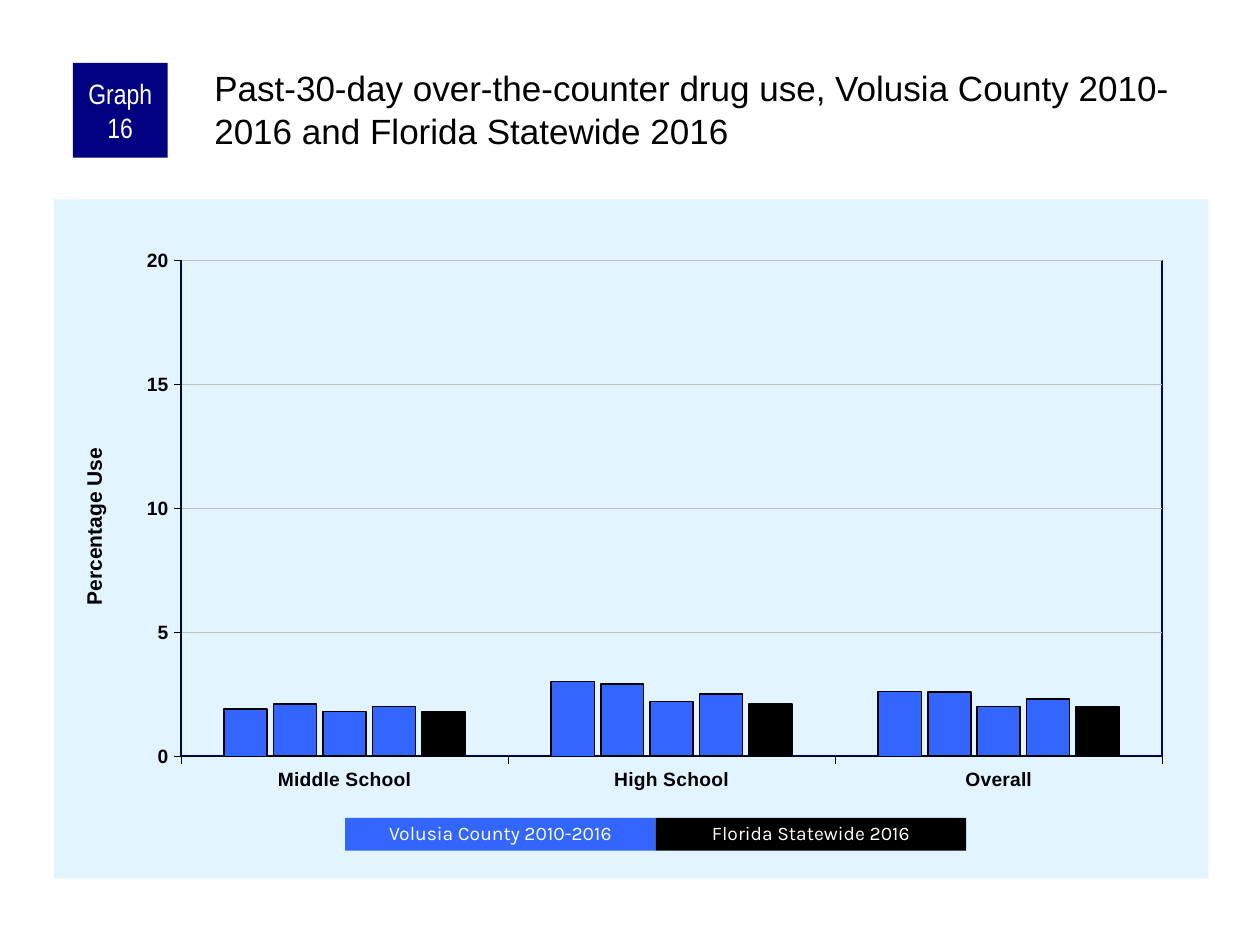
import dataclasses
import typing

import lxml.etree
import pptx
import pptx.chart.data
import pptx.dml.color
import pptx.enum.chart
import pptx.enum.shapes
import pptx.enum.text
import pptx.oxml
import pptx.oxml.ns
import pptx.util

Cm = pptx.util.Cm
Pt = pptx.util.Pt
RGB = pptx.dml.color.RGBColor.from_string
qn = pptx.oxml.ns.qn


@dataclasses.dataclass(frozen=True)
class Theme:
    navy: str = "000080"
    blue: str = "3366FF"
    black: str = "000000"
    white: str = "FFFFFF"
    panel: str = "E1F4FF"
    grid: str = "C0C0C0"
    font: str = "Arial"
    narrow_font: str = "Arial Narrow"
    legend_font: str = "Karla"
    title_size: float = 20
    badge_size: float = 16
    axis_title_size: float = 12
    label_size: float = 11
    hairline: float = 0.25


class Area(typing.NamedTuple):
    left: float
    top: float
    width: float
    height: float

    def lengths(self) -> list:
        return [Cm(value) for value in self]


@dataclasses.dataclass(frozen=True)
class Series:
    name: str
    values: tuple
    color: str
    outline: float = 1


@dataclasses.dataclass(frozen=True)
class Label:
    text: str
    area: Area
    fill: str
    font: str
    size: float
    spacing: float = 1
    margin: float = 0.13


THEME = Theme()
CATEGORIES = ("Middle School", "High School", "Overall")
SERIES = (
    Series("Series 1", (1.9, 3, 2.6), THEME.blue, 0.75),
    Series("Series 2", (2.1, 2.9, 2.6), THEME.blue),
    Series("Series 3", (1.8, 2.2, 2), THEME.blue),
    Series("Series 4", (2, 2.5, 2.3), THEME.blue),
    Series("Series 5", (1.8, 2.1, 2), THEME.black),
)
TITLE = "Past-30-day over-the-counter drug use, Volusia County 2010-2016 and Florida Statewide 2016"
TITLE_AREA = Area(4.24, 1.27, 20.12, 2.11)
CHART_AREA = Area(1.09, 4.02, 23.27, 13.69)
BADGE = Label("Graph 16", Area(1.47, 1.27, 1.91, 1.91), THEME.navy,
              THEME.narrow_font, THEME.badge_size)
LEGEND = (("Volusia County 2010-2016", THEME.blue), ("Florida Statewide 2016", THEME.black))
LEGEND_AREA = Area(6.96, 16.49, 6.26, 0.66)


def style_font(font, *, name: str, size: float, color: str, bold: bool = False) -> None:
    font.name = name
    font.size = Pt(size)
    font.bold = bold
    font.color.rgb = RGB(color)


def style_line(line, color: str, width: float) -> None:
    line.color.rgb = RGB(color)
    line.width = Pt(width)


def write_text(frame, text: str, *, align, anchor, margins: tuple,
               spacing: float = 1, **font_format) -> None:
    frame.word_wrap = True
    frame.auto_size = pptx.enum.text.MSO_AUTO_SIZE.NONE
    frame.vertical_anchor = anchor
    frame.margin_left, frame.margin_top, frame.margin_right, frame.margin_bottom = map(Cm, margins)
    para = frame.paragraphs[0]
    para.alignment = align
    para.line_spacing = spacing
    span = para.add_run()
    span.text = text
    style_font(span.font, **font_format)


def add_label(page, label: Label) -> None:
    box = page.shapes.add_shape(pptx.enum.shapes.MSO_SHAPE.RECTANGLE, *label.area.lengths())
    box.shadow.inherit = False
    box.fill.solid()
    box.fill.fore_color.rgb = RGB(label.fill)
    box.line.fill.background()
    write_text(box.text_frame, label.text, align=pptx.enum.text.PP_ALIGN.CENTER,
               anchor=pptx.enum.text.MSO_ANCHOR.MIDDLE,
               margins=(label.margin, 0, label.margin, 0), spacing=label.spacing,
               name=label.font, size=label.size, color=THEME.white)


def set_layout(parent, position: int, **places: float) -> None:
    for old in parent.findall(qn("c:layout")):
        parent.remove(old)
    layout = pptx.oxml.parse_xml(f"<c:layout {pptx.oxml.ns.nsdecls('c')}><c:manualLayout/></c:layout>")
    sizes = {"layoutTarget": "inner"} if "w" in places else {}
    modes = {"xMode": "edge", "yMode": "edge"}
    for tag, value in {**sizes, **modes, **places}.items():
        lxml.etree.SubElement(layout[0], qn(f"c:{tag}")).set("val", str(value))
    parent.insert(position, layout)


def shape_properties(content: str):
    return pptx.oxml.parse_xml(f"<c:spPr {pptx.oxml.ns.nsdecls('c', 'a')}>{content}</c:spPr>")


def solid(color: str) -> str:
    return f'<a:solidFill><a:srgbClr val="{color}"/></a:solidFill>'


def style_axis(axis) -> None:
    axis.major_tick_mark = pptx.enum.chart.XL_TICK_MARK.OUTSIDE
    axis.minor_tick_mark = pptx.enum.chart.XL_TICK_MARK.NONE
    style_line(axis.format.line, THEME.black, THEME.hairline)
    style_font(axis.tick_labels.font, name=THEME.font, size=THEME.label_size,
               color=THEME.black, bold=True)


def add_usage_chart(page) -> None:
    data = pptx.chart.data.CategoryChartData()
    data.categories = CATEGORIES
    for series in SERIES:
        data.add_series(series.name, series.values)
    chart = page.shapes.add_chart(pptx.enum.chart.XL_CHART_TYPE.COLUMN_CLUSTERED,
                                  *CHART_AREA.lengths(), data).chart
    chart.has_title = False
    chart.has_legend = False
    style_font(chart.font, name=THEME.font, size=THEME.label_size, color=THEME.black)

    plot = chart.plots[0]
    plot.gap_width = 200
    plot.overlap = -15
    plot.vary_by_categories = False
    for column, series in zip(plot.series, SERIES):
        column.format.fill.solid()
        column.format.fill.fore_color.rgb = RGB(series.color)
        style_line(column.format.line, THEME.black, series.outline)

    style_axis(chart.category_axis)
    axis = chart.value_axis
    style_axis(axis)
    axis.minimum_scale, axis.maximum_scale, axis.major_unit = 0, 20, 5
    axis.has_major_gridlines = True
    style_line(axis.major_gridlines.format.line, THEME.grid, THEME.hairline)
    span = axis.axis_title.text_frame.paragraphs[0].add_run()
    span.text = "Percentage Use"
    style_font(span.font, name=THEME.font, size=THEME.axis_title_size,
               color=THEME.black, bold=True)
    set_layout(axis.axis_title._element, 1, x=0.02, y=0.36)

    chart_root = chart._chartSpace.find(qn("c:chart"))
    plot_area = chart_root.find(qn("c:plotArea"))
    set_layout(plot_area, 0, x=0.11, y=0.09, w=0.85, h=0.73)
    border = f'<a:ln w="{Pt(1)}">{solid(THEME.navy)}</a:ln>'
    plot_area.append(shape_properties("<a:noFill/>" + border))
    chart_root.addnext(shape_properties(solid(THEME.panel) + "<a:ln><a:noFill/></a:ln>"))


def main() -> None:
    deck = pptx.Presentation()
    deck.slide_width, deck.slide_height = Cm(25.4), Cm(19.05)
    page = deck.slides.add_slide(deck.slide_layouts.get_by_name("Title Only"))
    title = page.shapes.title
    title.left, title.top, title.width, title.height = TITLE_AREA.lengths()
    write_text(title.text_frame, TITLE, align=pptx.enum.text.PP_ALIGN.LEFT,
               anchor=pptx.enum.text.MSO_ANCHOR.TOP, margins=(0.08, 0.08, 0, 0),
               name=THEME.font, size=THEME.title_size, color=THEME.black)
    add_usage_chart(page)
    add_label(page, BADGE)
    for index, (text, fill) in enumerate(LEGEND):
        area = LEGEND_AREA._replace(left=LEGEND_AREA.left + index * LEGEND_AREA.width)
        add_label(page, Label(text, area, fill, THEME.legend_font, THEME.label_size, 0.9))
    deck.save("out.pptx")


if __name__ == "__main__":
    main()
